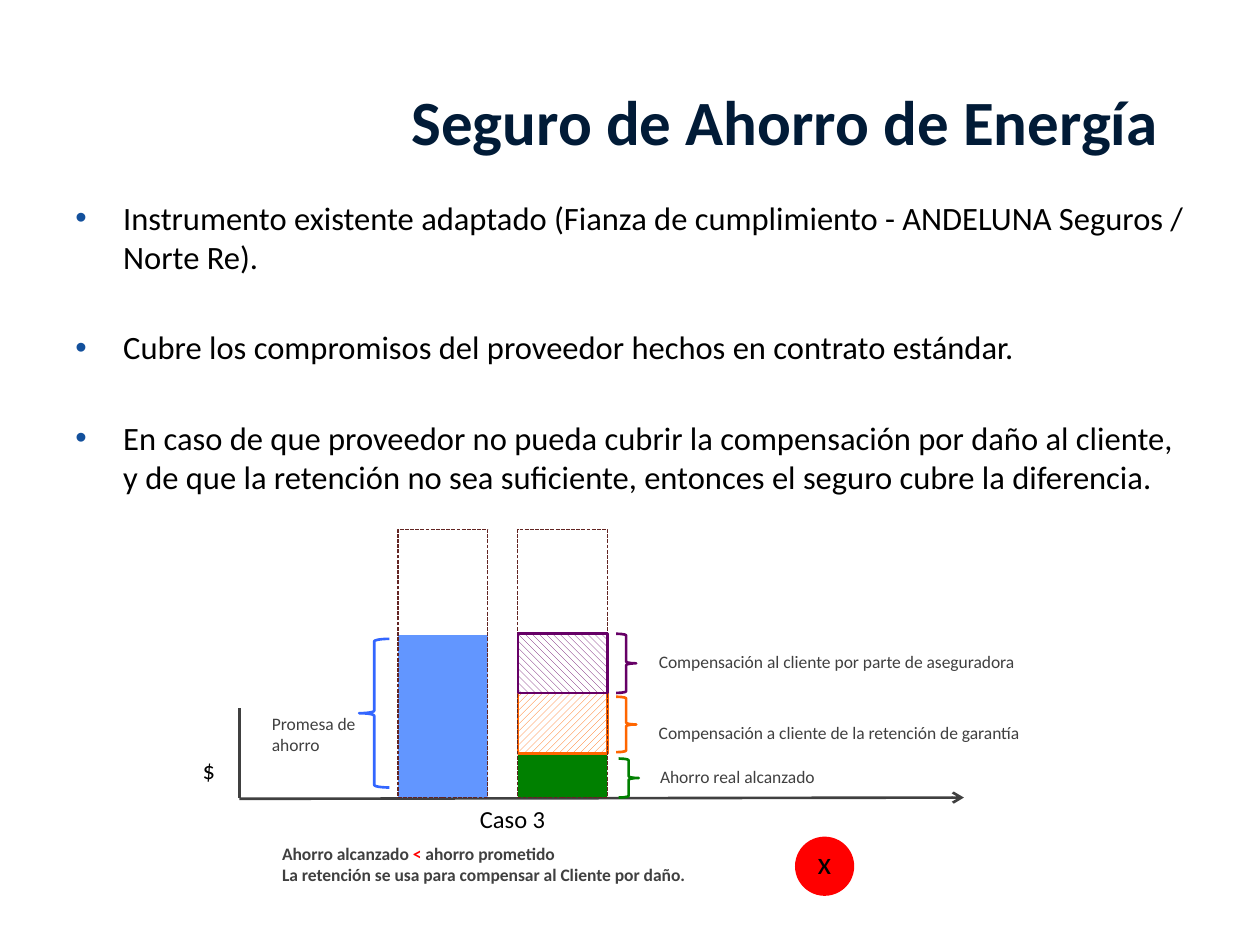
import pptx
import pptx.util
import pptx.dml.color
import pptx.enum.dml
import pptx.enum.shapes
import pptx.enum.text
import lxml.etree
from pptx.util import Inches

COLORS = {
    "title": "011B37", "black": "000000", "gray": "404040", "white": "FFFFFF",
    "bullet": "13509C", "promise": "6296FF", "promise_brace": "3366FF",
    "outline": "632523", "insurer": "660066", "retention": "FF6600",
    "savings": "008000", "red": "FF0000",
}
SHAPES = pptx.enum.shapes.MSO_SHAPE
PATTERNS = pptx.enum.dml.MSO_PATTERN
ALIGN = pptx.enum.text.PP_ALIGN
ANCHOR = pptx.enum.text.MSO_ANCHOR

deck = pptx.Presentation()
deck.slide_width, deck.slide_height = Inches(10), Inches(7.5)
slide = deck.slides.add_slide(deck.slide_layouts[6])


def rgb(name):
    return pptx.dml.color.RGBColor.from_string(COLORS[name])


def add_text(paragraphs, at, size=10, color="gray", bold=False, wrap=False,
             align=ALIGN.LEFT, anchor=ANCHOR.TOP, bullet=None, gap=0):
    box = slide.shapes.add_textbox(*map(Inches, at))
    frame = box.text_frame
    frame.word_wrap = wrap
    frame.vertical_anchor = anchor
    for index, runs in enumerate(paragraphs):
        paragraph = frame.paragraphs[0] if index == 0 else frame.add_paragraph()
        paragraph.alignment = align
        if index:
            paragraph.space_before = pptx.util.Pt(gap)
        if bullet:
            props = paragraph._p.get_or_add_pPr()
            props.set("marL", str(Inches(0.38)))
            props.set("indent", str(-Inches(0.38)))
            bullet_color = lxml.etree.SubElement(props, pptx.oxml.ns.qn("a:buClr"))
            lxml.etree.SubElement(bullet_color, pptx.oxml.ns.qn("a:srgbClr"), val=COLORS[bullet])
            lxml.etree.SubElement(props, pptx.oxml.ns.qn("a:buFont"), typeface="Arial")
            lxml.etree.SubElement(props, pptx.oxml.ns.qn("a:buChar"), char="•")
        for words, run_color in [(runs, color)] if isinstance(runs, str) else runs:
            run = paragraph.add_run()
            run.text = words
            run.font.name = "Calibri"
            run.font.size = pptx.util.Pt(size)
            run.font.bold = bold
            run.font.color.rgb = rgb(run_color)


def add_figure(kind, at, fill=None, line=None, width=1.5, pattern=None, dashed=False, rotation=0):
    figure = slide.shapes.add_shape(kind, *map(Inches, at))
    figure.shadow.inherit = False
    figure.rotation = rotation
    if pattern:
        figure.fill.patterned()
        figure.fill.pattern = pattern
        figure.fill.fore_color.rgb = rgb(fill)
        figure.fill.back_color.rgb = rgb("white")
    elif fill:
        figure.fill.solid()
        figure.fill.fore_color.rgb = rgb(fill)
    else:
        figure.fill.background()
    if line:
        figure.line.color.rgb = rgb(line)
        figure.line.width = pptx.util.Pt(width)
        if dashed:
            figure.line.dash_style = pptx.enum.dml.MSO_LINE.SQUARE_DOT
    else:
        figure.line.fill.background()


add_text(["Seguro de Ahorro de Energía"], (0.5, 0.6, 8.79, 0.71), size=36, color="title",
         bold=True, wrap=True, align=ALIGN.RIGHT, anchor=ANCHOR.MIDDLE)
add_text([
    "Instrumento existente adaptado (Fianza de cumplimiento - ANDELUNA Seguros / Norte Re).",
    "Cubre los compromisos del proveedor hechos en contrato estándar.",
    "En caso de que proveedor no pueda cubrir la compensación por daño al cliente, "
    "y de que la retención no sea suficiente, entonces el seguro cubre la diferencia.",
], (0.5, 1.52, 9, 2.48), size=18.6, color="black", wrap=True, bullet="bullet", gap=29.5)

for start, end, arrow in [((1.9, 6.33), (1.9, 5.62), False), ((1.9, 6.34), (7.65, 6.33), True)]:
    axis = slide.shapes.add_connector(
        pptx.enum.shapes.MSO_CONNECTOR.STRAIGHT, *map(Inches, start + end))
    axis.line.color.rgb = rgb("gray")
    axis.line.width = pptx.util.Pt(1.5)
    if arrow:
        lxml.etree.SubElement(axis.line._get_or_add_ln(), pptx.oxml.ns.qn("a:tailEnd"), type="arrow")
    lxml.etree.SubElement(axis._element.spPr, pptx.oxml.ns.qn("a:effectLst"))

promise_left, case_left, bar_width = 3.16, 4.11, 0.71
add_figure(SHAPES.RECTANGLE, (promise_left, 5.04, bar_width, 1.29), fill="promise")
add_figure(SHAPES.RECTANGLE, (case_left, 5.97, bar_width, 0.36), fill="savings")
add_figure(SHAPES.RECTANGLE, (case_left, 5.37, bar_width, 0.61), fill="retention",
           line="retention", pattern=PATTERNS.WIDE_UPWARD_DIAGONAL)
for left in (promise_left, case_left):
    add_figure(SHAPES.RECTANGLE, (left, 4.2, bar_width, 2.13), line="outline", width=0.75, dashed=True)
add_figure(SHAPES.RECTANGLE, (case_left, 5.03, bar_width, 0.47), fill="insurer",
           line="insurer", pattern=PATTERNS.WIDE_DOWNWARD_DIAGONAL)

for brace_at, brace_color, label, label_at in [
    ((4.89, 5.03, 0.16, 0.47), "insurer",
     "Compensación al cliente por parte de aseguradora", (5.13, 5.12, 3.35, 0.27)),
    ((4.89, 5.53, 0.16, 0.44), "retention",
     "Compensación a cliente de la retención de garantía", (5.13, 5.68, 3.4, 0.27)),
    ((4.91, 6.02, 0.16, 0.31), "savings",
     "Ahorro real alcanzado", (5.14, 6.03, 1.57, 0.27)),
]:
    add_figure(SHAPES.RIGHT_BRACE, brace_at, line=brace_color)
    add_text([label], label_at)

add_text(["Promesa de ahorro"], (2.06, 5.61, 0.87, 0.44), wrap=True)
add_figure(SHAPES.RIGHT_BRACE, (2.85, 5.07, 0.24, 1.18), line="promise_brace", rotation=180)

add_text(["$"], (1.51, 5.94, 0.31, 0.34), size=14, color="black")
add_text(["Caso 3"], (3.71, 6.33, 0.82, 0.34), size=14, color="black")
add_text([
    [("Ahorro alcanzado ", "gray"), ("<", "red"), (" ahorro prometido", "gray")],
    "La retención se usa para compensar al Cliente por daño.",
], (2.14, 6.64, 4.01, 0.44), bold=True)
add_figure(SHAPES.OVAL, (6.31, 6.64, 0.47, 0.47), fill="red")
add_text(["x"], (6.39, 6.64, 0.33, 0.4), size=18, color="black")

deck.save("out.pptx")
